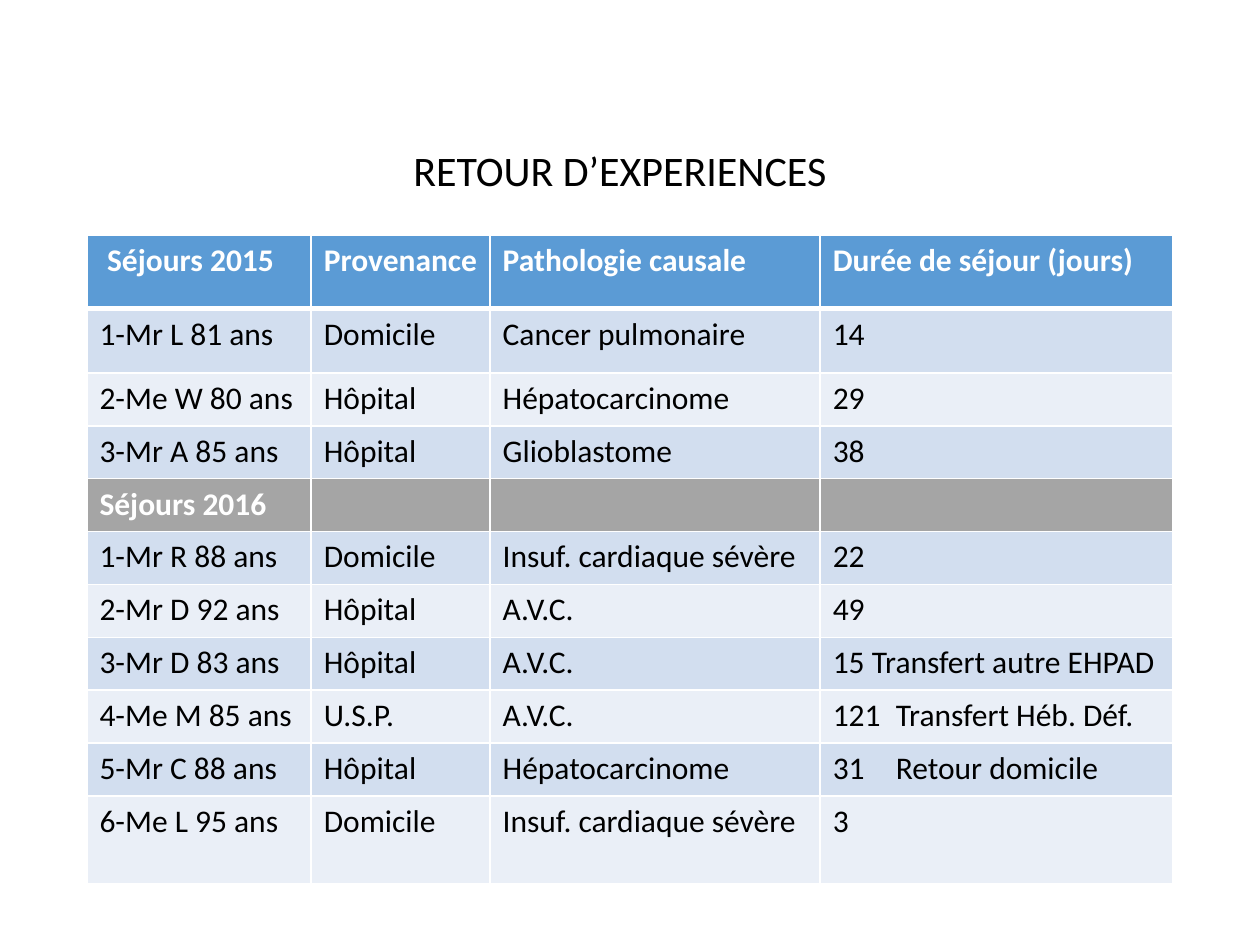
import pptx
import pptx.dml.color
import pptx.enum.text
import pptx.oxml
import pptx.oxml.ns
import pptx.util
from pptx.util import Inches

WHITE, BLACK = "FFFFFF", "000000"
HEADER_BLUE, YEAR_GREY = "5B9BD5", "A5A5A5"
BANDS = ("D2DEEF", "EAEFF7")


def colour(value):
    return pptx.dml.color.RGBColor.from_string(value)


class SlideBuilder:
    font_name = "Calibri"

    def __init__(self, deck):
        self.slide = deck.slides.add_slide(deck.slide_layouts[6])

    def format(self, paragraph, size, ink, bold=False):
        for span in paragraph.runs:
            span.font.name = self.font_name
            span.font.size = pptx.util.Pt(size)
            span.font.bold = bold
            span.font.color.rgb = colour(ink)

    def title(self, text, left, top, width, height):
        box = self.slide.shapes.add_textbox(
            Inches(left), Inches(top), Inches(width), Inches(height))
        frame = box.text_frame
        frame.word_wrap = True
        frame.vertical_anchor = pptx.enum.text.MSO_ANCHOR.MIDDLE
        frame.text = text
        para = frame.paragraphs[0]
        para.alignment = pptx.enum.text.PP_ALIGN.CENTER
        para.line_spacing = 0.9
        self.format(para, 24, BLACK)

    def table(self, left, top, widths, heights):
        frame = self.slide.shapes.add_table(
            len(heights), len(widths), Inches(left), Inches(top),
            Inches(sum(widths)), Inches(sum(heights)))
        table = frame.table
        for column, width in zip(table.columns, widths):
            column.width = Inches(width)
        for row, height in zip(table.rows, heights):
            row.height = Inches(height)
        return table

    def border(self, cell, side, points):
        properties = cell._tc.get_or_add_tcPr()
        properties.append(pptx.oxml.parse_xml(
            f'<a:ln{side} {pptx.oxml.ns.nsdecls("a")} w="{pptx.util.Pt(points)}">'
            f'<a:solidFill><a:srgbClr val="{WHITE}"/></a:solidFill></a:ln{side}>'))

    def tab_stop(self, para, position):
        para._p.get_or_add_pPr().append(pptx.oxml.parse_xml(
            f'<a:tabLst {pptx.oxml.ns.nsdecls("a")}>'
            f'<a:tab pos="{Inches(position)}" algn="l"/></a:tabLst>'))

    def cell(self, cell, text, fill, ink, bold, top_line, bottom_line):
        for side, points in zip("LRTB", (1, 1, top_line, bottom_line)):
            self.border(cell, side, points)
        cell.fill.solid()
        cell.fill.fore_color.rgb = colour(fill)
        cell.text_frame.text = text
        para = cell.text_frame.paragraphs[0]
        if "\t" in text:
            self.tab_stop(para, 0.5)
        para.font.size = pptx.util.Pt(18)
        self.format(para, 18, ink, bold)


def main():
    deck = pptx.Presentation()
    deck.slide_width, deck.slide_height = Inches(10), Inches(7.5)
    builder = SlideBuilder(deck)

    # Title
    builder.title("RETOUR D’EXPERIENCES", 0.61, 1.1, 8.62, 0.55)

    # Stays by year
    stays = [
        ("Séjours 2015", "Provenance", "Pathologie causale", "Durée de séjour (jours)"),
        ("1-Mr L 81 ans", "Domicile", "Cancer pulmonaire", "14"),
        ("2-Me W 80 ans", "Hôpital", "Hépatocarcinome", "29"),
        ("3-Mr A 85 ans", "Hôpital", "Glioblastome", "38"),
        ("Séjours 2016", "", "", ""),
        ("1-Mr R 88 ans", "Domicile", "Insuf. cardiaque sévère", "22"),
        ("2-Mr D 92 ans", "Hôpital", "A.V.C.", "49"),
        ("3-Mr D 83 ans", "Hôpital", "A.V.C.", "15 Transfert autre EHPAD"),
        ("4-Me M 85 ans", "U.S.P.", "A.V.C.", "121\tTransfert Héb. Déf."),
        ("5-Mr C 88 ans", "Hôpital", "Hépatocarcinome", "31\tRetour domicile"),
        ("6-Me L 95 ans", "Domicile", "Insuf. cardiaque sévère", "3"),
    ]
    year_fills = {0: HEADER_BLUE, 4: YEAR_GREY}
    heights = [0.58, 0.51] + [0.42] * 8 + [0.7]
    table = builder.table(0.69, 1.87, [1.78, 1.42, 2.62, 2.8], heights)
    for r, stay in enumerate(stays):
        is_year = r in year_fills
        fill = year_fills.get(r, BANDS[(r + 1) % 2])
        for c, text in enumerate(stay):
            builder.cell(table.cell(r, c), text, fill,
                         WHITE if is_year else BLACK, is_year,
                         top_line=3 if r == 1 else 1,
                         bottom_line=3 if r == 0 else 1)
    table.cell(0, 0).margin_left = Inches(0.16)

    deck.save("out.pptx")


if __name__ == "__main__":
    main()
